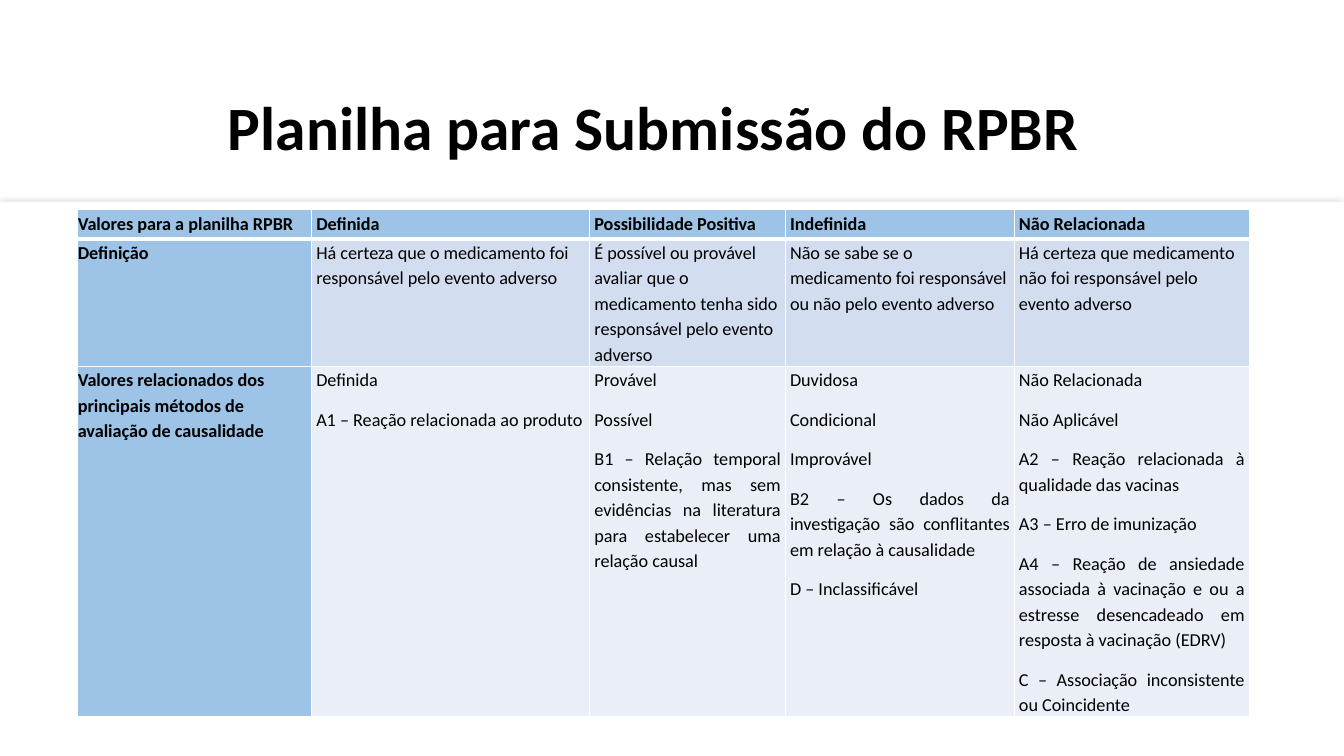
from lxml.etree import SubElement
from pptx import Presentation
from pptx.dml.color import RGBColor
from pptx.enum.shapes import MSO_SHAPE as Shape
from pptx.enum.text import MSO_ANCHOR as Anchor, PP_ALIGN as Align
from pptx.oxml import parse_xml
from pptx.oxml.ns import nsdecls, qn
from pptx.util import Cm, Pt

TITLE = "Planilha para Submissão do RPBR"
HEADS = ["Valores para a planilha RPBR", "Definida", "Possibilidade Positiva",
         "Indefinida", "Não Relacionada"]
MEANING = [
    "Definição",
    "Há certeza que o medicamento foi responsável pelo evento adverso",
    "É possível ou provável avaliar que o medicamento tenha sido responsável "
    "pelo evento adverso",
    "Não se sabe se o medicamento foi responsável ou não pelo evento adverso",
    "Há certeza que medicamento não foi responsável pelo evento adverso",
]
# Each cell of the last row: plain lines, then justified lines
VALUES = [
    (["Valores relacionados dos principais métodos de avaliação de causalidade"], []),
    (["Definida", "A1 – Reação relacionada ao produto"], []),
    (["Provável", "Possível"],
     ["B1 – Relação temporal consistente, mas sem evidências na literatura "
      "para estabelecer uma relação causal"]),
    (["Duvidosa", "Condicional", "Improvável"],
     ["B2 – Os dados da investigação são conflitantes em relação à causalidade",
      "D – Inclassificável"]),
    (["Não Relacionada"],
     ["Não Aplicável",
      "A2 – Reação relacionada à qualidade das vacinas",
      "A3 – Erro de imunização",
      "A4 – Reação de ansiedade associada à vacinação e ou a estresse "
      "desencadeado em resposta à vacinação (EDRV)",
      "C – Associação inconsistente ou Coincidente"]),
]
ROWS = [[([text], []) for text in HEADS], [([text], []) for text in MEANING], VALUES]
WIDTHS = [5.89, 7.01, 4.93, 5.77, 5.92]
HEIGHTS = [0.74, 3.18, 8.8]
FILLS = ["9DC3E6", "D2DEEF", "EAEFF7"]
HEAD, WHITE, BLACK, GREY = FILLS[0], "FFFFFF", "000000", "A6A6A6"
FONT = "Calibri"


def color(code):
    return RGBColor.from_string(code)


def write(par, text, size, bold):
    run = par.add_run()
    run.text = text
    run.font.name, run.font.size, run.font.bold = FONT, Pt(size), bold
    run.font.color.rgb = color(BLACK)


def border(cell, bottom):
    """Draw white edges, the lower one with its own weight in points."""
    props = cell._tc.get_or_add_tcPr()
    edges = [("lnL", 1), ("lnR", 1), ("lnT", 1), ("lnB", bottom)]
    for spot, (tag, weight) in enumerate(edges):
        line = parse_xml(f'<a:{tag} {nsdecls("a")} w="{Pt(weight)}"><a:solidFill>'
                         f'<a:srgbClr val="{WHITE}"/></a:solidFill></a:{tag}>')
        props.insert(spot, line)


def add_panel(slide, deck):
    """Add the white lower panel with its soft grey edge."""
    top = Cm(5.08)
    panel = slide.shapes.add_shape(Shape.RECTANGLE, 0, top, deck.slide_width,
                                   deck.slide_height - top)
    panel.fill.solid()
    panel.fill.fore_color.rgb = color(WHITE)
    panel.line.fill.background()
    panel.shadow.inherit = False
    effects = panel._element.spPr.find(qn("a:effectLst"))
    glow = SubElement(effects, qn("a:outerShdw"), blurRad=str(Pt(5)), dist="0",
                      dir="0", algn="ctr", rotWithShape="0")
    tint = SubElement(glow, qn("a:srgbClr"), val=GREY)
    SubElement(tint, qn("a:alpha"), val="42000")


def add_title(slide):
    title = slide.shapes.title
    title.left, title.top = Cm(5.49), Cm(1.83)
    title.width, title.height = Cm(30.3), Cm(2.92)
    frame = title.text_frame
    frame.vertical_anchor = Anchor.MIDDLE
    frame.word_wrap = True
    par = frame.paragraphs[0]
    par.alignment, par.line_spacing = Align.LEFT, 0.9
    write(par, TITLE, 44, True)


def fill_cell(cell, lines, row, col):
    plain, even = lines
    label = row == 0 or col == 0
    cell.fill.solid()
    cell.fill.fore_color.rgb = color(HEAD if label else FILLS[row])
    border(cell, 1 if row else 3)
    cell.margin_left = cell.margin_right = Cm(0.12 if col else 0)
    cell.margin_top = cell.margin_bottom = 0
    cell.vertical_anchor = Anchor.TOP
    frame = cell.text_frame
    for spot, text in enumerate(plain + even):
        par = frame.add_paragraph() if spot else frame.paragraphs[0]
        par.alignment = Align.LEFT if spot < len(plain) else Align.JUSTIFY
        par.line_spacing, par.space_after = 1.15, Pt(10)
        write(par, text, 13, label)


def add_grid(slide):
    frame = slide.shapes.add_table(len(ROWS), len(WIDTHS), Cm(1.96), Cm(5.28),
                                   Cm(sum(WIDTHS)), Cm(sum(HEIGHTS)))
    table = frame.table
    table.horz_banding = False
    table.first_row = False
    for part, width in zip(table.columns, WIDTHS):
        part.width = Cm(width)
    for part, height in zip(table.rows, HEIGHTS):
        part.height = Cm(height)
    for row, cells in enumerate(ROWS):
        for col, lines in enumerate(cells):
            fill_cell(table.cell(row, col), lines, row, col)


def main():
    deck = Presentation()
    deck.slide_width, deck.slide_height = Cm(33.87), Cm(19.05)
    slide = deck.slides.add_slide(deck.slide_layouts[5])
    add_panel(slide, deck)
    add_title(slide)
    add_grid(slide)
    deck.save("out.pptx")


if __name__ == "__main__":
    main()
